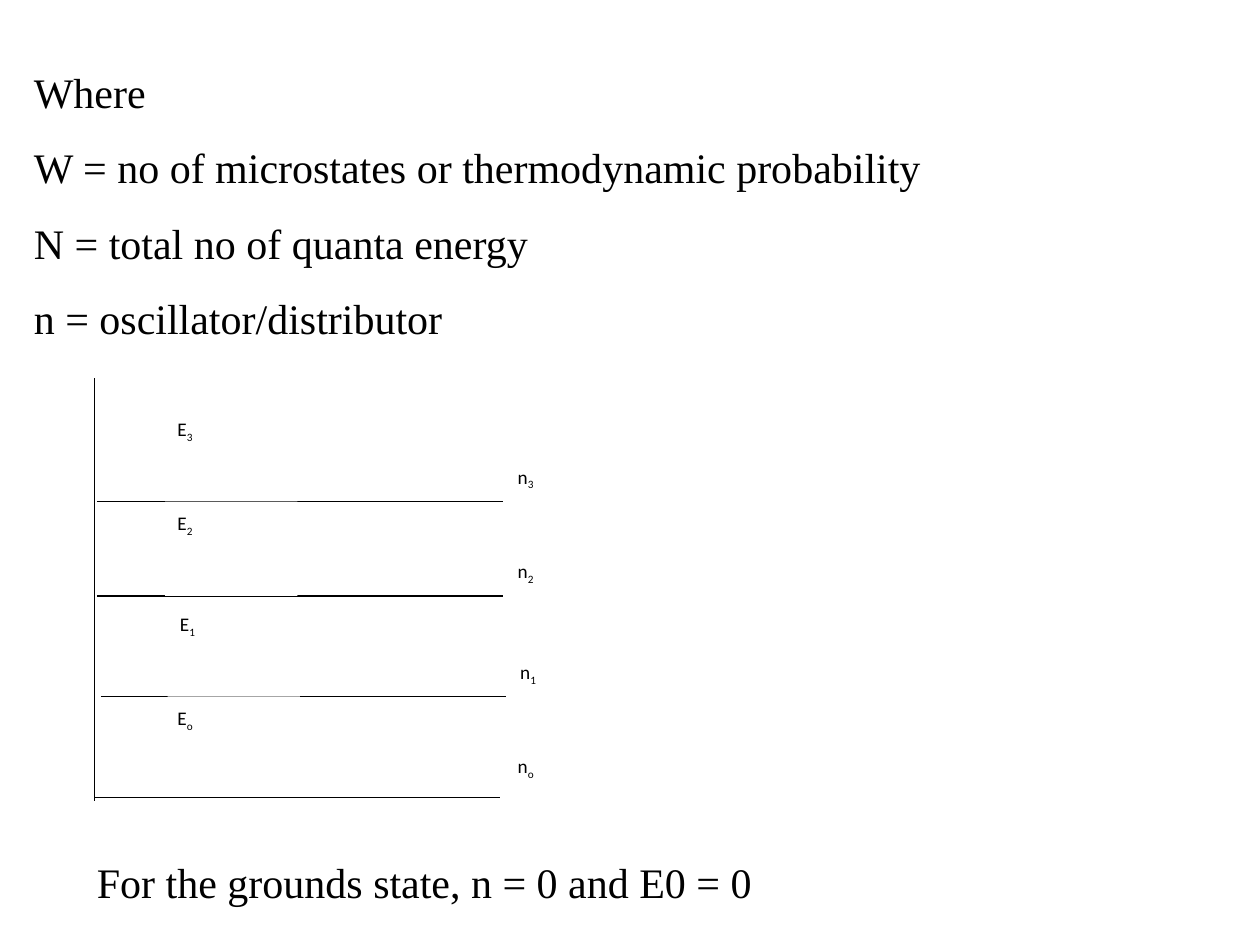
"""Build a slide on microstates with an energy level diagram."""
from pptx import Presentation
from pptx import util as u
from pptx.dml.color import RGBColor
from pptx.enum import shapes, text
from pptx.oxml.ns import qn
from lxml import etree

THEME = {
    "ink": RGBColor(0, 0, 0),
    "paper": RGBColor(255, 255, 255),
    "body": {"name": "Times New Roman", "size": u.Pt(24)},
    "label": {"name": "Calibri", "size": u.Pt(11)},
    "line": u.Pt(0.75),
}

prs = Presentation()
prs.slide_width, prs.slide_height = u.Inches(10), u.Inches(7.5)
COL, ROW = prs.slide_width / 10, prs.slide_height / 7.5
s = prs.slides.add_slide(prs.slide_layouts[6])


def add_run(p, words, style):
    r = p.add_run()
    r.text = words
    for key, value in THEME[style].items():
        setattr(r.font, key, value)
    r.font.color.rgb = THEME["ink"]
    return r


def add_line(x1, y1, x2, y2):
    ln = s.shapes.add_connector(
        shapes.MSO_CONNECTOR.STRAIGHT,
        *(round(v) for v in (x1 * COL, y1 * ROW, x2 * COL, y2 * ROW)))
    ln.line.color.rgb = THEME["ink"]
    ln.line.width = THEME["line"]
    etree.SubElement(ln._element.spPr, qn("a:effectLst"))


definitions = [
    "Where",
    "W = no of microstates or thermodynamic probability",
    "N = total no of quanta energy",
    "n = oscillator/distributor",
]
ground_state = ["For the grounds state, n = 0 and E0 = 0"]
for lines, (x, y, w, h), spacing, wrap in [
    (definitions, (0.17, 0.3, 9, 2.45), 1.5, True),
    (ground_state, (0.67, 6.75, 5.45, 0.5), 1.0, False),
]:
    sp = s.shapes.add_textbox(round(x * COL), round(y * ROW), round(w * COL), round(h * ROW))
    tf = sp.text_frame
    for key, value in {"word_wrap": wrap, "vertical_anchor": text.MSO_ANCHOR.MIDDLE,
                       "auto_size": text.MSO_AUTO_SIZE.SHAPE_TO_FIT_TEXT}.items():
        setattr(tf, key, value)
    for i, words in enumerate(lines):
        p = tf.paragraphs[0] if i == 0 else tf.add_paragraph()
        p.alignment = text.PP_ALIGN.JUSTIFY
        p.line_spacing = spacing
        add_run(p, words, "body")

LEVEL_W, LABEL_W, LABEL_H = 3.22, 1.05, 0.72
N_DX, N_DY = 2.7, 0.38
levels = [
    ("o", 0.75, 6.33, 1.31, 5.56),
    ("1", 0.8, 5.53, 1.33, 4.81),
    ("2", 0.77, 4.73, 1.31, 4.01),
    ("3", 0.77, 3.98, 1.31, 3.26),
]
add_line(0.75, 3, 0.75, 6.36)
for sub, line_x, line_y, label_x, label_y in levels:
    add_line(line_x, line_y, line_x + LEVEL_W, line_y)
    for symbol, dx, dy in [("E", 0, 0), ("n", N_DX, N_DY)]:
        sp = s.shapes.add_shape(
            shapes.MSO_SHAPE.RECTANGLE,
            round((label_x + dx) * COL), round((label_y + dy) * ROW),
            round(LABEL_W * COL), round(LABEL_H * ROW))
        sp.shadow.inherit = False
        sp.fill.solid()
        sp.fill.fore_color.rgb = THEME["paper"]
        sp.line.fill.background()
        tf = sp.text_frame
        tf.vertical_anchor = text.MSO_ANCHOR.TOP
        p = tf.paragraphs[0]
        p.alignment = text.PP_ALIGN.LEFT
        p.space_after = u.Pt(10)
        add_run(p, symbol, "label")
        r = add_run(p, sub, "label")
        r.font._element.set("baseline", "-25000")

prs.save("out.pptx")
